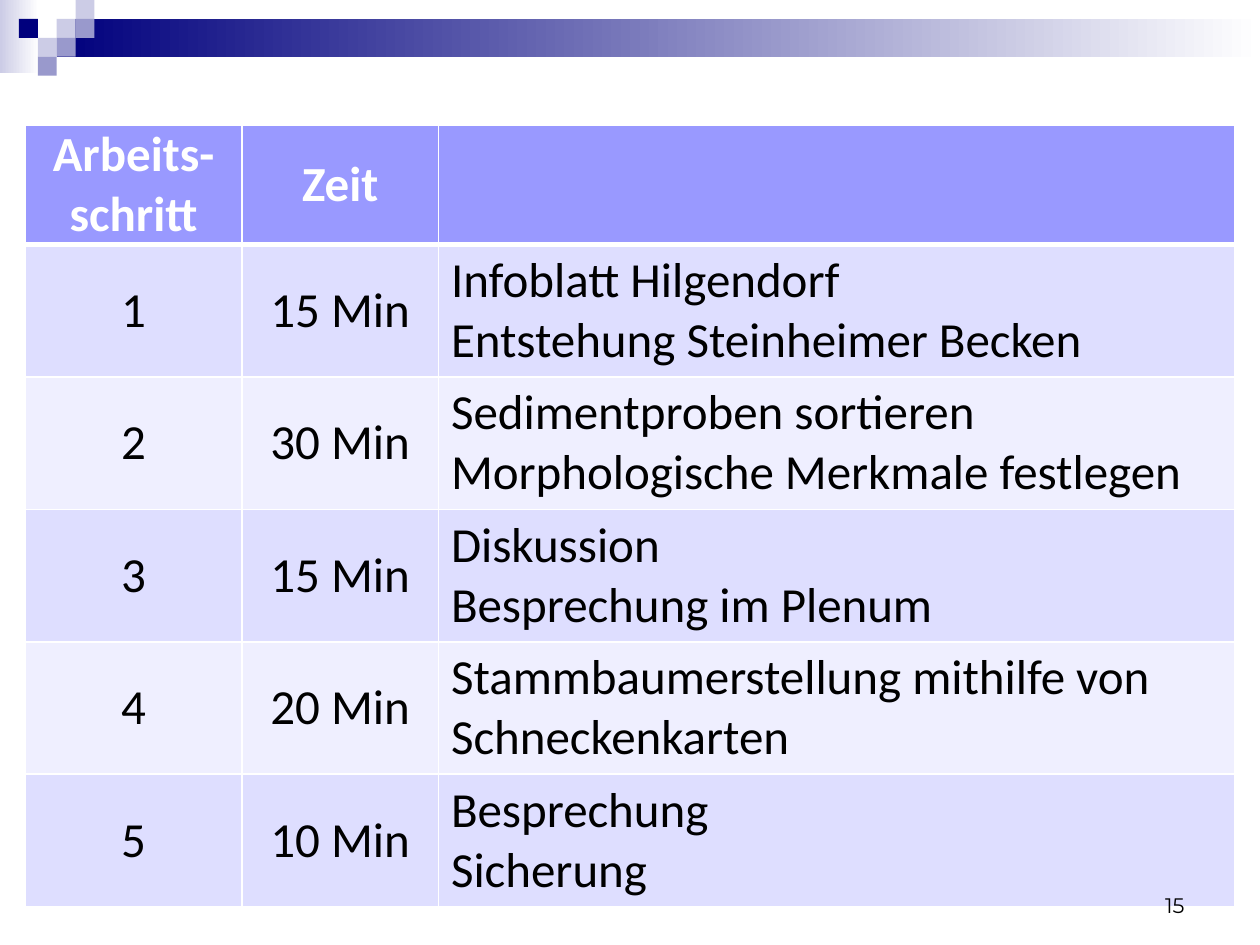
from lxml.etree import SubElement
from pptx import Presentation
from pptx.dml.color import RGBColor
from pptx.enum.shapes import MSO_SHAPE
from pptx.enum.text import MSO_ANCHOR as Anchor, PP_ALIGN as Align
from pptx.oxml.ns import qn
from pptx.util import Inches, Pt

# Content: step, time, activities (one string per paragraph)
HEADINGS = ("Arbeits-schritt", "Zeit", [])
STEPS = [
    ("1", "15 Min", ["Infoblatt Hilgendorf\nEntstehung Steinheimer Becken"]),
    ("2", "30 Min", ["Sedimentproben sortieren", "Morphologische Merkmale festlegen"]),
    ("3", "15 Min", ["Diskussion\nBesprechung im Plenum"]),
    ("4", "20 Min", ["Stammbaumerstellung mithilfe von Schneckenkarten"]),
    ("5", "10 Min", ["Besprechung", "Sicherung"]),
]
PAGE_NUMBER = "15"

COLORS = {
    "navy": "00007D", "lavender": "CCCCE6", "violet": "9999CC", "white": "FFFFFF",
    "black": "000000", "header": "9999FF", "odd": "DEDEFF", "even": "EFEFFF",
}

# Layout in inches
WIDTH, HEIGHT = 10, 7.5
UNIT = 0.15  # side of one mosaic square
MOSAIC = [  # column, row, colour
    (3, 1, "lavender"), (4, 0, "lavender"), (4, 1, "violet"), (2, 2, "lavender"),
    (1, 1, "navy"), (3, 2, "violet"), (2, 3, "violet"),
]
TABLE_LEFT, TABLE_TOP = 0.2, 0.99
COLUMN_WIDTHS = (1.72, 1.56, 6.32)
HEADER_HEIGHT, STEP_HEIGHT = 0.94, 1.05


def rgb(name):
    return RGBColor.from_string(COLORS[name])


def add_block(left, top, width, height, color, fade=False):
    block = slide.shapes.add_shape(
        MSO_SHAPE.RECTANGLE, *map(Inches, (left, top, width, height)))
    block.shadow.inherit = False
    block.line.fill.background()
    if fade:
        block.fill.gradient()
        block.fill.gradient_angle = 0
        for stop, name in zip(block.fill.gradient_stops, (color, "white")):
            stop.color.rgb = rgb(name)
    else:
        block.fill.solid()
        block.fill.fore_color.rgb = rgb(color)


def add_run(paragraph, text, font, size, color, bold=False):
    run = paragraph.add_run()
    run.text = text
    run.font.name, run.font.size, run.font.bold = font, Pt(size), bold
    run.font.color.rgb = rgb(color)


def set_borders(cell, **widths):
    for side in "LRTB":
        line = SubElement(cell._tc.get_or_add_tcPr(), qn(f"a:ln{side}"),
                          w=str(Pt(widths.get(side, 1))))
        fill = SubElement(line, qn("a:solidFill"))
        SubElement(fill, qn("a:srgbClr"), val=COLORS["white"])


def fill_cell(cell, content, background, is_header, top_border):
    centered = isinstance(content, str)
    set_borders(cell, T=top_border, B=3 if is_header else 1)
    cell.fill.solid()
    cell.fill.fore_color.rgb = rgb(background)
    cell.vertical_anchor = Anchor.MIDDLE
    if centered:
        cell.margin_left = cell.margin_right = Inches(0.07)
        cell.margin_top = cell.margin_bottom = 0
    for index, text in enumerate([content] if centered else content):
        frame = cell.text_frame
        paragraph = frame.add_paragraph() if index else frame.paragraphs[0]
        paragraph.alignment = Align.CENTER if centered else Align.LEFT
        for number, line in enumerate(text.split("\n")):
            if number:
                paragraph.add_line_break()
            add_run(paragraph, line, "Calibri", 28,
                    "white" if is_header else "black", is_header)


prs = Presentation()
prs.slide_width, prs.slide_height = Inches(WIDTH), Inches(HEIGHT)
slide = prs.slides.add_slide(prs.slide_layouts[6])

# Header band and mosaic
add_block(0, 0, 0.31, 0.58, "lavender", fade=True)
add_block(3 * UNIT, UNIT, WIDTH - 3 * UNIT, 2 * UNIT, "navy", fade=True)
for column, row, color in MOSAIC:
    add_block(column * UNIT, row * UNIT, UNIT, UNIT, color)

# Schedule table
rows = [HEADINGS, *STEPS]
row_heights = [HEADER_HEIGHT] + [STEP_HEIGHT] * len(STEPS)
schedule = slide.shapes.add_table(
    len(rows), len(COLUMN_WIDTHS), Inches(TABLE_LEFT), Inches(TABLE_TOP),
    Inches(sum(COLUMN_WIDTHS)), Inches(sum(row_heights))).table
for column, width in zip(schedule.columns, COLUMN_WIDTHS):
    column.width = Inches(width)
for r, (row, height) in enumerate(zip(rows, row_heights)):
    schedule.rows[r].height = Inches(height)
    background = "header" if r == 0 else ("odd" if r % 2 else "even")
    for c, content in enumerate(row):
        fill_cell(schedule.cell(r, c), content, background, r == 0, 3 if r == 1 else 1)

# Page number
page = slide.shapes.add_textbox(*map(Inches, (7.17, 6.83, 2.33, 0.5))).text_frame
page.word_wrap = True
page.vertical_anchor = Anchor.BOTTOM
page.paragraphs[0].alignment = Align.RIGHT
add_run(page.paragraphs[0], PAGE_NUMBER, "Montserrat", 12, "black")

prs.save("out.pptx")
